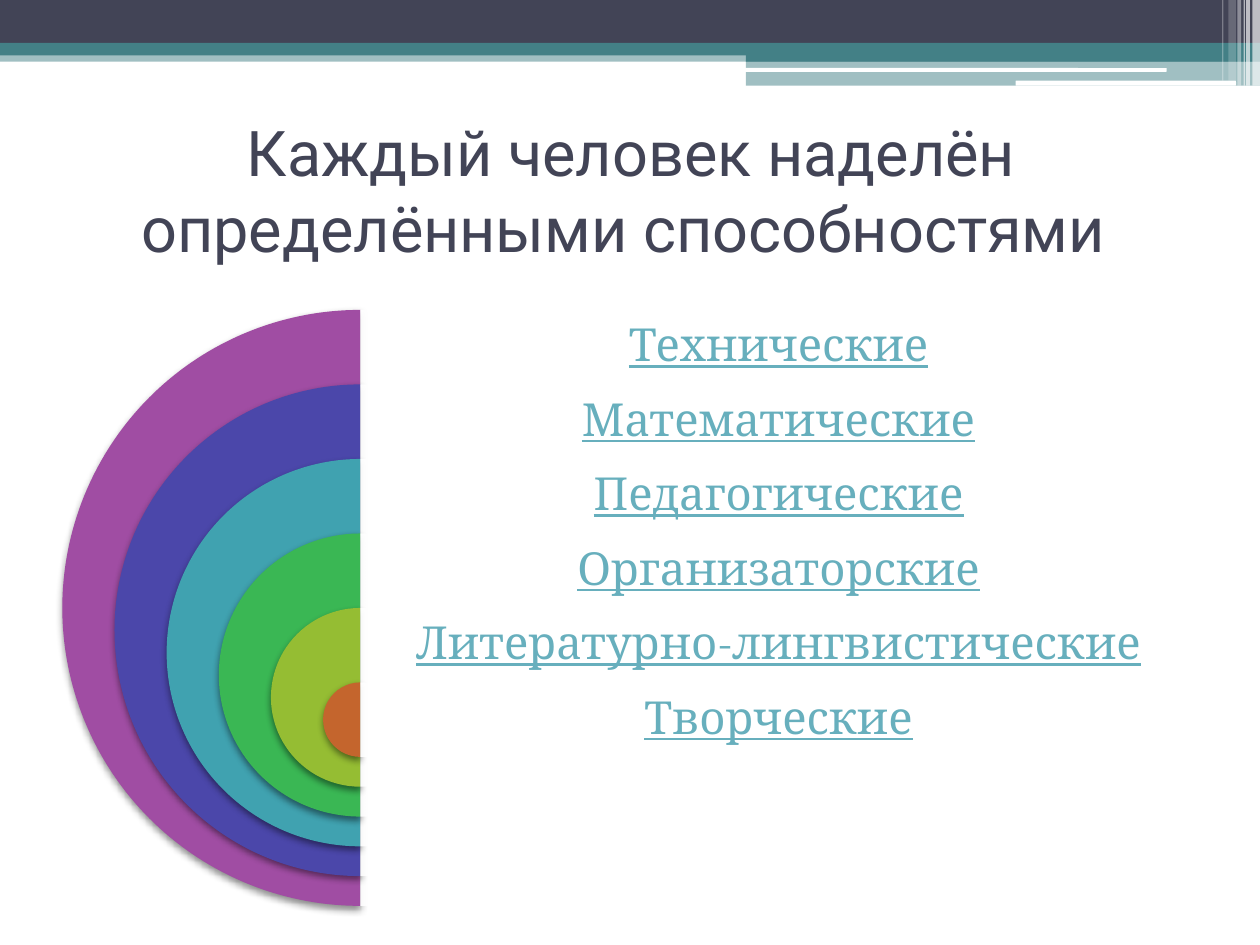
import pptx
import pptx.util
import pptx.dml.color
import pptx.enum.shapes
import pptx.enum.text
import pptx.oxml
import pptx.oxml.ns

Inches = pptx.util.Inches
Pt = pptx.util.Pt
KIND = pptx.enum.shapes.MSO_SHAPE
ALIGN = pptx.enum.text.PP_ALIGN
ANCHOR = pptx.enum.text.MSO_ANCHOR

COLORS = {
    "dark": "424456", "teal": "438086", "white": "FFFFFF", "link": "67AFBD",
    "purple": "A04DA3", "indigo": "4B47AA", "cyan": "40A2B0",
    "green": "3AB754", "lime": "95BD33", "orange": "C4652D",
}
TITLE = "Каждый человек наделён определёнными способностями "
SKILLS = [
    ("Технические", "purple"),
    ("Математические", "indigo"),
    ("Педагогические", "cyan"),
    ("Организаторские", "green"),
    ("Литературно-лингвистические", "lime"),
    ("Творческие", "orange"),
]
BANDS = [
    (0, 0.4, 10, 0.09, "teal", 50),
    (0, 0, 10, 0.34, "dark", 100),
    (0, 0.34, 10, 0.1, "teal", 100),
    (5.92, 0.39, 4.08, 0.1, "teal", 100),
    (5.92, 0.48, 4.08, 0.2, "teal", 50),
]
PILLS = [(5.91, 0.54, 3.35, 0.03), (8.06, 0.64, 1.75, 0.04)]
STRIPES = [
    (9.94, 0.06, 0.68, 65), (9.89, 0.03, 0.68, 65), (9.87, 0.01, 0.68, 60),
    (9.82, 0.03, 0.68, 40), (9.75, 0.06, 0.64, 20), (9.7, 0.01, 0.64, 30),
]
TOP, SIZE, MID, RIGHT = 2.46, 4.73, 2.86, 9.5
STEP = SIZE / 8
SHADE = (
    '<a:effectLst %s><a:outerShdw blurRad="%d" dist="%d" dir="5400000" '
    'algn="ctr" rotWithShape="0"><a:srgbClr val="000000">'
    '<a:alpha val="45000"/></a:srgbClr></a:outerShdw></a:effectLst>'
)


def tint(name):
    return pptx.dml.color.RGBColor.from_string(COLORS[name])


def draw(slide, kind, box, color, alpha=100):
    shape = slide.shapes.add_shape(kind, *map(Inches, box))
    shape.shadow.inherit = False
    shape.line.fill.background()
    shape.fill.solid()
    shape.fill.fore_color.rgb = tint(color)
    if alpha < 100:
        tag = shape.fill._xPr.find(".//" + pptx.oxml.ns.qn("a:srgbClr"))
        tag.append(pptx.oxml.parse_xml(
            '<a:alpha %s val="%d"/>' % (pptx.oxml.ns.nsdecls("a"), alpha * 1000)))
    return shape


def shade(shape):
    props = shape._element.spPr
    old = props.find(pptx.oxml.ns.qn("a:effectLst"))
    props.replace(old, pptx.oxml.parse_xml(
        SHADE % (pptx.oxml.ns.nsdecls("a"), Pt(4), Pt(2))))


def write(slide, box, text, font, size, color):
    frame = slide.shapes.add_textbox(*map(Inches, box)).text_frame
    frame.word_wrap = True
    frame.vertical_anchor = ANCHOR.MIDDLE
    frame.text = text
    para = frame.paragraphs[0]
    para.alignment = ALIGN.CENTER
    run = para.runs[0]
    run.font.name = font
    run.font.size = Pt(size)
    run.font.color.rgb = tint(color)
    return frame


def main():
    deck = pptx.Presentation()
    deck.slide_width, deck.slide_height = Inches(10), Inches(7.5)
    slide = deck.slides.add_slide(deck.slide_layouts[6])

    for *box, color, alpha in BANDS:
        draw(slide, KIND.RECTANGLE, box, color, alpha)
    for box in PILLS:
        draw(slide, KIND.ROUNDED_RECTANGLE, box, "white")
    for left, width, height, alpha in STRIPES:
        draw(slide, KIND.RECTANGLE, (left, 0, width, height), "white", alpha)

    write(slide, (0.51, 0.92, 9, 1.17), TITLE, "Roboto", 36, "dark")

    for i, (skill, color) in enumerate(SKILLS):
        top = TOP + i * STEP
        size = SIZE - i * (SIZE - STEP) / (len(SKILLS) - 1)
        pie = draw(slide, KIND.PIE, (MID - size / 2, top, size, size), color)
        pie.adjustments[0], pie.adjustments[1] = 54, 162
        shade(pie)
        draw(slide, KIND.RECTANGLE, (MID, top, RIGHT - MID, size), "white", 90)
        frame = write(slide, (MID, top, RIGHT - MID, STEP), skill, "Cambria", 26, "link")
        frame.margin_left = frame.margin_right = Inches(0.11)
        frame.margin_top = frame.margin_bottom = Inches(0.11)
        para = frame.paragraphs[0]
        para.line_spacing = 0.9
        para.runs[0].font.underline = True

    deck.save("out.pptx")


if __name__ == "__main__":
    main()
